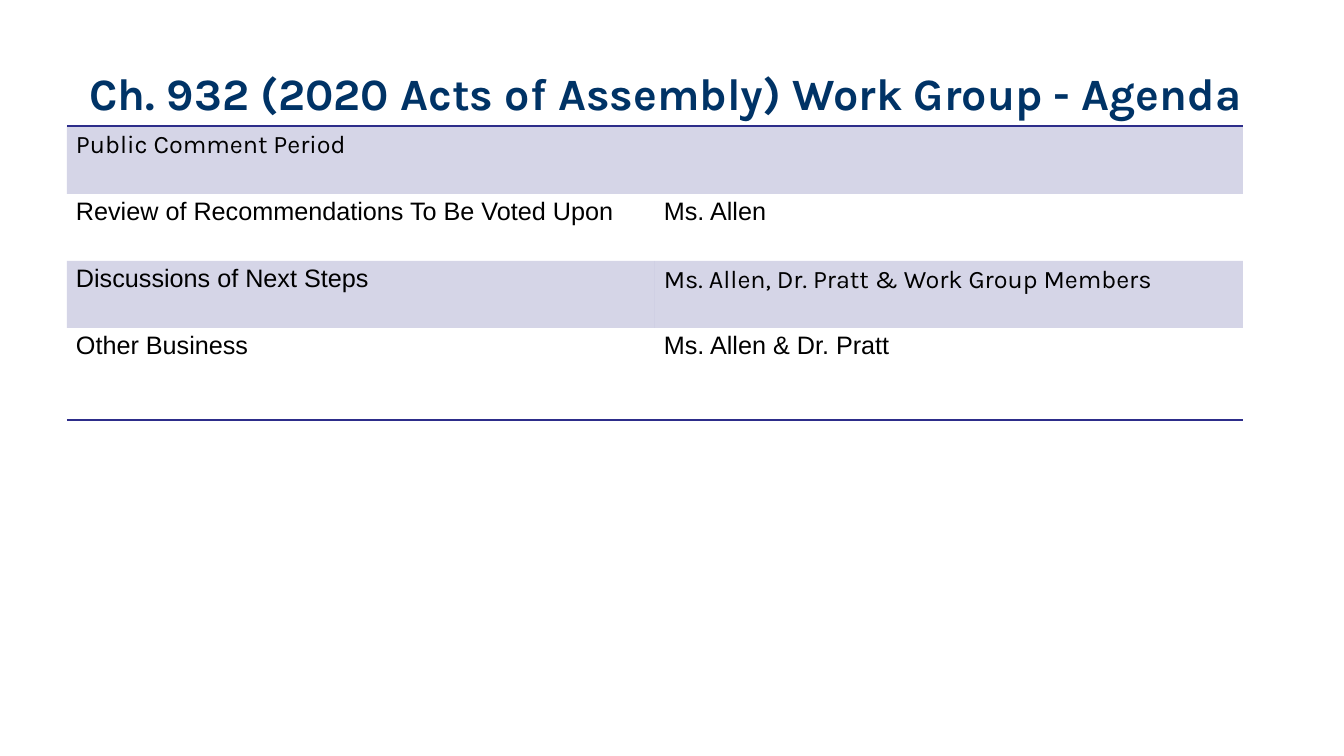
from pptx import Presentation
from pptx.dml.color import RGBColor
from pptx.enum.text import MSO_ANCHOR, MSO_AUTO_SIZE, PP_ALIGN
from pptx.oxml import parse_xml
from pptx.oxml.ns import nsdecls, qn
from pptx.util import Emu, Pt

MIDDLE, TOP = MSO_ANCHOR.MIDDLE, MSO_ANCHOR.TOP
CENTER, LEFT = PP_ALIGN.CENTER, PP_ALIGN.LEFT
NO_FIT = MSO_AUTO_SIZE.NONE
NO_STYLE = "{2D5ABB26-0587-4C30-8999-92F81FD0307C}"
PX = 914400 / 100.8
THEME = {
    "title": "003366", "text": "000000", "accent": "2D2D8A",
    "title_size": 32, "text_size": 18,
    "brand_font": "Karla", "plain_font": "Arial",
}


def px(length):
    return Emu(round(length * PX))


def write(frame, text, *, size, color, font, bold=False, align=LEFT):
    para = frame.paragraphs[0]
    para.alignment = align
    span = para.add_run()
    span.text = text
    span.font.name = font
    span.font.size = Pt(size)
    span.font.bold = bold
    span.font.color.rgb = RGBColor.from_string(color)


deck = Presentation()
deck.slide_width, deck.slide_height = px(1344), px(756)
page = deck.slides.add_slide(deck.slide_layouts[5])

# Title
title = page.shapes.title
title.left, title.top, title.width, title.height = px(67), px(30), px(1210), px(126)
title.text_frame.vertical_anchor = MIDDLE
title.text_frame.auto_size = NO_FIT
title.text_frame.word_wrap = True
write(title.text_frame, "Ch. 932 (2020 Acts of Assembly) Work Group - Agenda ",
      size=THEME["title_size"], color=THEME["title"], font=THEME["brand_font"],
      bold=True, align=CENTER)

# Agenda table: each entry is a text and its font
brand, plain = THEME["brand_font"], THEME["plain_font"]
agenda = [
    [("Public Comment Period", brand)],
    [("Review of Recommendations To Be Voted Upon", plain), ("Ms. Allen", plain)],
    [("Discussions of Next Steps", plain),
     ("Ms. Allen, Dr. Pratt & Work Group Members", brand)],
    [("Other Business", plain), ("Ms. Allen & Dr. Pratt", plain)],
]
row_heights = [68, 67, 67, 92]
table = page.shapes.add_table(len(agenda), 2, px(67), px(126),
                              px(1176), px(sum(row_heights))).table
table.first_row = table.horz_banding = False
table._tbl.tblPr.find(qn("a:tableStyleId")).text = NO_STYLE
for column in table.columns:
    column.width = px(588)
for row, height in zip(table.rows, row_heights):
    row.height = px(height)
table.cell(0, 0).merge(table.cell(0, 1))

# Cell text
for row_index, entries in enumerate(agenda):
    for column_index, (text, font) in enumerate(entries):
        write(table.cell(row_index, column_index).text_frame, text,
              size=THEME["text_size"], color=THEME["text"], font=font)

# Bands, margins and outer rules
rules = {0: "lnT", len(agenda) - 1: "lnB"}
for row_index, row in enumerate(table.rows):
    for cell in row.cells:
        cell.vertical_anchor = TOP
        cell.margin_left = cell.margin_right = px(9)
        cell.margin_top = cell.margin_bottom = px(4)
        properties = cell._tc.get_or_add_tcPr()
        if row_index % 2 == 0:
            cell.fill.solid()
            cell.fill.fore_color.rgb = RGBColor.from_string(THEME["accent"])
            color = properties.find(qn("a:solidFill"))[0]
            color.append(parse_xml(f'<a:alpha {nsdecls("a")} val="20000"/>'))
        else:
            cell.fill.background()
        if row_index in rules:
            side = rules[row_index]
            properties.insert(0, parse_xml(
                f'<a:{side} {nsdecls("a")} w="{Pt(1)}"><a:solidFill>'
                f'<a:srgbClr val="{THEME["accent"]}"/></a:solidFill></a:{side}>'))

deck.save("out.pptx")
